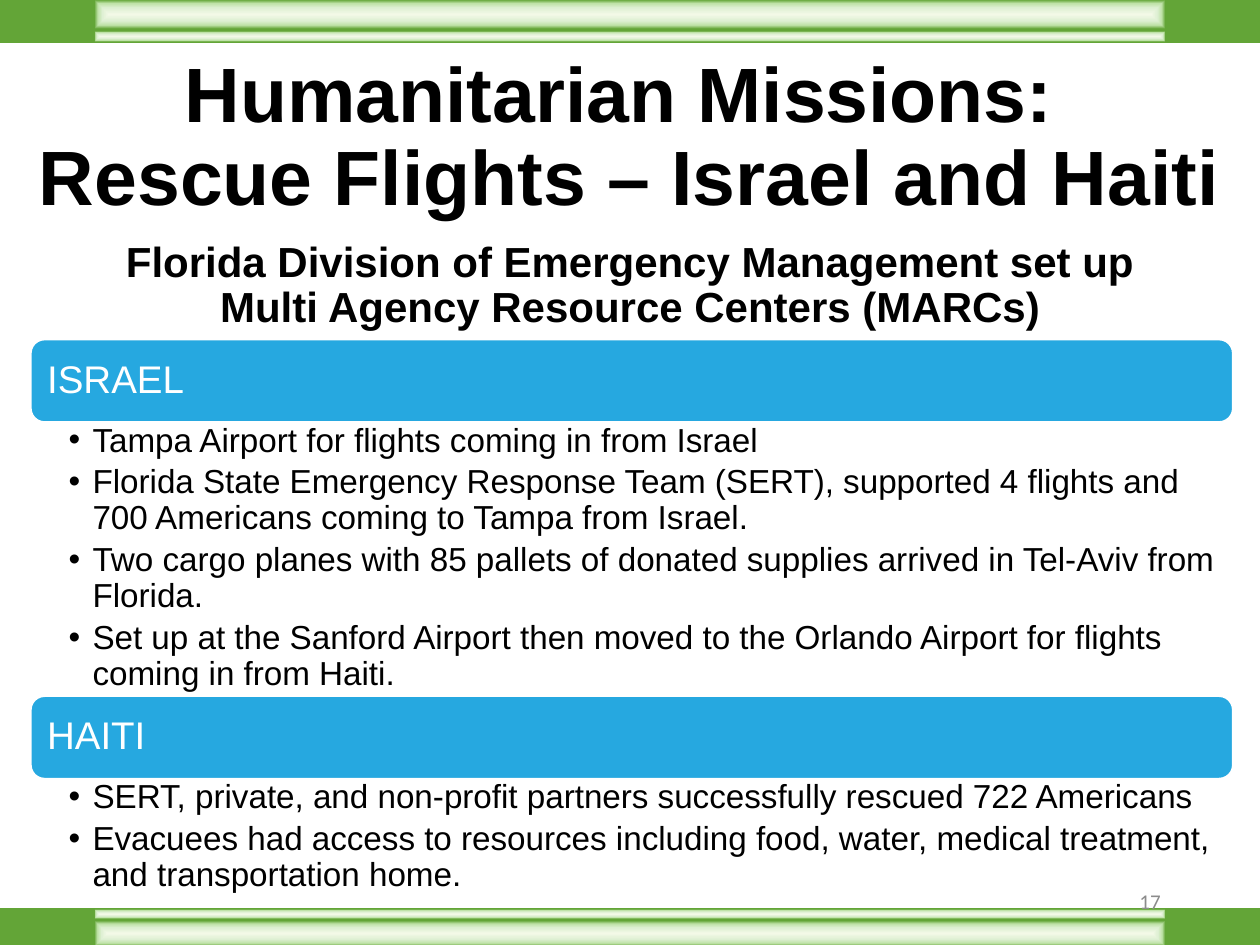
from dataclasses import dataclass

from lxml import etree
from pptx import Presentation
from pptx.dml.color import RGBColor
from pptx.enum.shapes import MSO_SHAPE as Shape
from pptx.enum.text import MSO_ANCHOR as Anchor, PP_ALIGN as Align
from pptx.oxml.ns import qn
from pptx.util import Inches, Pt

COLUMNS, ROWS = 100, 75


@dataclass(frozen=True)
class Theme:
    font: str = "Arial"
    number_font: str = "Calibri"
    ink: str = "000000"
    paper: str = "FFFFFF"
    accent: str = "26A8E0"
    muted: str = "8C8C8C"
    band: tuple = ((0, "F3F9E7"), (37, "DFF0D4"), (64, "BFE2A8"), (85, "63A537"))
    title: float = 44
    subtitle: float = 24
    heading: float = 22
    body: float = 19
    number: float = 12


def add_bullet(paragraph, indent, font):
    properties = paragraph._p.get_or_add_pPr()
    properties.set("marL", str(Inches(indent)))
    properties.set("indent", str(-Inches(indent)))
    etree.SubElement(properties, qn("a:buFont"), typeface=font)
    etree.SubElement(properties, qn("a:buChar"), char="•")


def write(frame, *lines, size, color, font, bold=False, align=Align.LEFT,
          anchor=Anchor.TOP, insets=(0.1, 0.05, 0.1, 0.05), spacing=0.9,
          after=0, bullet_indent=None):
    """Fill a text frame, one paragraph per line; insets are in inches."""
    frame.word_wrap = True
    frame.vertical_anchor = anchor
    (frame.margin_left, frame.margin_top,
     frame.margin_right, frame.margin_bottom) = map(Inches, insets)
    for index, line in enumerate(lines):
        paragraph = frame.add_paragraph() if index else frame.paragraphs[0]
        paragraph.text = line
        paragraph.alignment = align
        paragraph.line_spacing = spacing
        paragraph.space_after = Pt(after)
        if bullet_indent:
            add_bullet(paragraph, bullet_indent, font)
        for run in paragraph.runs:
            run.font.name, run.font.size, run.font.bold = font, Pt(size), bold
            run.font.color.rgb = RGBColor.from_string(color)


class Deck:
    """Draws on one slide; places are (column, row, columns, rows)."""

    def __init__(self, theme):
        self.theme = theme
        self.presentation = Presentation()
        self.presentation.slide_width = Inches(10)
        self.presentation.slide_height = Inches(7.5)
        self.slide = self.presentation.slides.add_slide(
            self.presentation.slide_layouts[6])

    def place(self, column, row, columns, rows):
        cell_width = self.presentation.slide_width / COLUMNS
        cell_height = self.presentation.slide_height / ROWS
        return (round(column * cell_width), round(row * cell_height),
                round(columns * cell_width), round(rows * cell_height))

    def text(self, place, *lines, **style):
        style = {"font": self.theme.font, "color": self.theme.ink, **style}
        box = self.slide.shapes.add_textbox(*self.place(*place))
        write(box.text_frame, *lines, **style)

    def shape(self, kind, place):
        shape = self.slide.shapes.add_shape(kind, *self.place(*place))
        shape.shadow.inherit = False
        return shape

    def band(self, row, rows):
        """A full-width bar that shades from a light middle to green edges."""
        bar = self.shape(Shape.RECTANGLE, (0, row, COLUMNS, rows))
        bar.line.fill.background()
        gradient = etree.Element(qn("a:gradFill"), rotWithShape="1")
        stops = etree.SubElement(gradient, qn("a:gsLst"))
        for position, color in self.theme.band:
            stop = etree.SubElement(stops, qn("a:gs"), pos=str(position * 1000))
            etree.SubElement(stop, qn("a:srgbClr"), val=color)
        center = etree.SubElement(gradient, qn("a:path"), path="shape")
        etree.SubElement(center, qn("a:fillToRect"),
                         l="50000", t="50000", r="50000", b="50000")
        bar._element.spPr.find(qn("a:prstGeom")).addnext(gradient)

    def section(self, row, rows, heading, *points):
        """A heading bar with a bulleted list of the given height below it."""
        theme = self.theme
        left, width, bar_rows = 2.45, 95.4, 6.55
        bar = self.shape(Shape.ROUNDED_RECTANGLE, (left, row, width, bar_rows))
        bar.fill.solid()
        bar.fill.fore_color.rgb = RGBColor.from_string(theme.accent)
        bar.line.color.rgb = RGBColor.from_string(theme.paper)
        bar.line.width = Pt(1)
        write(bar.text_frame, heading, size=theme.heading, color=theme.paper,
              font=theme.font, anchor=Anchor.MIDDLE,
              insets=(0.1, 0.09, 0.1, 0.09))
        self.text((left, row + bar_rows, width, rows), *points,
                  size=theme.body, after=theme.body * 0.18,
                  insets=(0.3, 0.01, 0.1, 0.01), bullet_indent=0.19)


def main():
    theme = Theme()
    deck = Deck(theme)
    # Neighbouring bands overlap a little so that no gap shows between them.
    for row, rows in ((2.4, 1), (-0.2, 2.7), (72.1, 0.9), (72.9, 2.4)):
        deck.band(row, rows)

    deck.text((0.7, 3.8, 98.6, 14.5),
              "Humanitarian Missions: \vRescue Flights – Israel and Haiti",
              size=theme.title, bold=True, align=Align.CENTER,
              anchor=Anchor.MIDDLE)
    deck.text((6.9, 18.65, 86.2, 8.3),
              "Florida Division of Emergency Management set up "
              "Multi Agency Resource Centers (MARCs)",
              size=theme.subtitle, bold=True, align=Align.CENTER)

    deck.section(
        26.95, 21.7, "ISRAEL",
        "Tampa Airport for flights coming in from Israel",
        "Florida State Emergency Response Team (SERT), supported 4 flights "
        "and 700 Americans coming to Tampa from Israel.",
        "Two cargo planes with 85 pallets of donated supplies arrived in "
        "Tel-Aviv from Florida.",
        "Set up at the Sanford Airport then moved to the Orlando Airport for "
        "flights coming in from Haiti.")
    deck.section(
        55.25, 9.4, "HAITI",
        "SERT, private, and non-profit partners successfully rescued 722 "
        "Americans",
        "Evacuees had access to resources including food, water, medical "
        "treatment, and transportation home.")

    deck.text((70.6, 69.5, 22.5, 4), "17", size=theme.number, spacing=1,
              color=theme.muted, font=theme.number_font, align=Align.RIGHT,
              anchor=Anchor.MIDDLE)
    deck.presentation.save("out.pptx")


if __name__ == "__main__":
    main()
